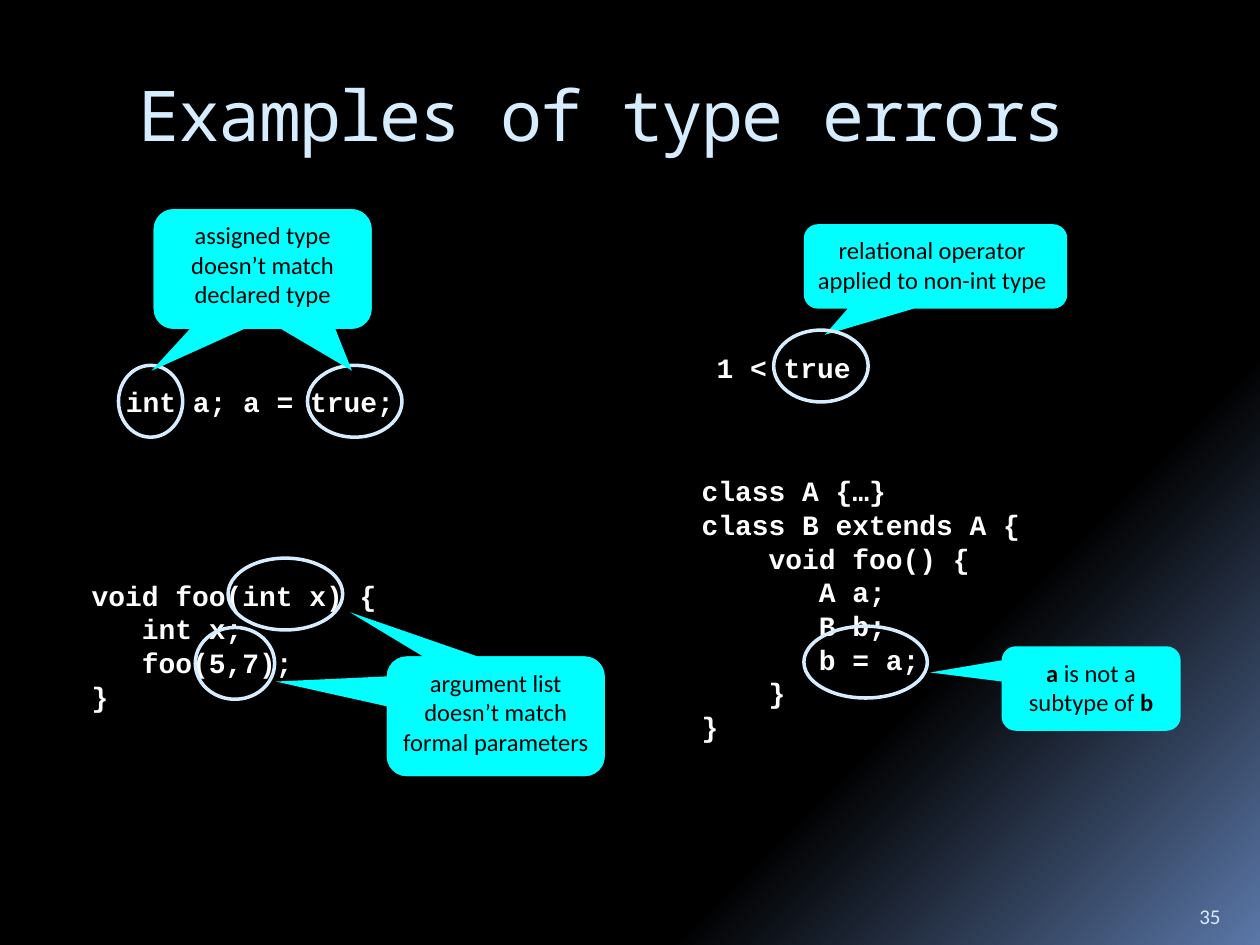
from pptx import Presentation
from pptx.dml.color import RGBColor
from pptx.enum.shapes import MSO_SHAPE
from pptx.enum.text import MSO_ANCHOR, PP_ALIGN
from pptx.util import Pt

PX = 9144  # 100 px to the inch
WHITE, BLACK, CYAN, PALE, BLUE = "FFFFFF", "000000", "00FFFF", "D6ECFF", "5B77A8"


def rgb(value):
    return RGBColor.from_string(value)


def place(box, origin=(0, 0)):
    """Turn a px box, relative to an origin, into EMU."""
    x, y, w, h = box
    return [n * PX for n in (origin[0] + x, origin[1] + y, w, h)]


def style(r, font, size, color, bold=False):
    r.font.name, r.font.size, r.font.bold = font, Pt(size), bold
    r.font.color.rgb = rgb(color)


def add_text(shapes, box, text, font, size, color, bold=False, wrap=True):
    tf = shapes.add_textbox(*place(box)).text_frame
    tf.word_wrap = wrap
    tf.text = text
    for p in tf.paragraphs:
        for r in p.runs:
            style(r, font, size, color, bold)
    return tf


def add_code(shapes, box, code):
    tf = add_text(shapes, box, code, "Courier New", 16, WHITE, True, wrap=False)
    for p in tf.paragraphs:
        p.line_spacing = Pt(19.25)
    tf.paragraphs[0].space_before = Pt(2)


def add_ring(shapes, box, origin):
    sp = shapes.add_shape(MSO_SHAPE.OVAL, *place(box, origin))
    sp.shadow.inherit = False
    sp.fill.background()
    sp.line.color.rgb = rgb(PALE)
    sp.line.width = Pt(2)


def add_note(shapes, box, origin, tips, runs, pads):
    """Callout with one bubble for each tip and its text in front."""
    for tip in tips:
        sp = shapes.add_shape(MSO_SHAPE.ROUNDED_RECTANGULAR_CALLOUT, *place(box, origin))
        sp.shadow.inherit = False
        sp.fill.solid()
        sp.fill.fore_color.rgb = rgb(CYAN)
        sp.line.fill.background()
        sp.adjustments[0], sp.adjustments[1] = tip
    x, y, w, h = box
    left, right = pads
    text_box = (x - left, y + 4, w + left + right, h - 10)
    tf = shapes.add_textbox(*place(text_box, origin)).text_frame
    tf.word_wrap = True
    p = tf.paragraphs[0]
    p.alignment = PP_ALIGN.CENTER
    for text, bold in runs:
        r = p.add_run()
        r.text = text
        style(r, "Calibri", 14, BLACK, bold)


def add_example(slide, box, code, rings, note, tips, runs, pads=(4, 4), rings_in_front=False):
    """Code in its box; rings and note are placed relative to the box."""
    add_code(slide.shapes, box, code)
    shapes = slide.shapes.add_group_shape().shapes
    origin = box[:2]
    if rings_in_front:
        add_note(shapes, note, origin, tips, runs, pads)
    for ring in rings:
        add_ring(shapes, ring, origin)
    if not rings_in_front:
        add_note(shapes, note, origin, tips, runs, pads)


def add_background(slide):
    fill = slide.background.fill
    fill.gradient()
    fill.gradient_angle = 315
    for stop, (position, color) in zip(fill.gradient_stops, [(0.73, BLACK), (1, BLUE)]):
        stop.position = position
        stop.color.rgb = rgb(color)


def add_title(slide, box, text):
    tf = add_text(slide.shapes, box, text, "Noto Sans Mono", 40, PALE)
    tf.margin_top = PX
    for r in tf.paragraphs[0].runs:
        r.font._element.set("spc", "-100")


def add_page_number(slide, box, number):
    tf = add_text(slide.shapes, box, number, "Calibri", 12, PALE)
    tf.vertical_anchor = MSO_ANCHOR.BOTTOM


def main():
    prs = Presentation()
    prs.slide_width, prs.slide_height = 1000 * PX, 750 * PX
    slide = prs.slides.add_slide(prs.slide_layouts[6])
    add_background(slide)
    add_page_number(slide, (942, 702, 50, 40), "35")
    add_title(slide, (100, 56, 850, 100), "Examples of type errors")

    add_example(
        slide, (90, 300, 272, 37), "int a; a = true;",
        rings=[(4, -10, 51, 57), (154, -10, 75, 57)],
        note=(32, -134, 173, 95), tips=[(-0.51, 0.85), (0.41, 0.85)],
        runs=[("assigned type doesn’t match declared type", False)])
    add_example(
        slide, (63, 454, 327, 117), "void foo(int x) {\n   int x;\n   foo(5,7);\n}",
        rings=[(92, 44, 63, 57), (118, -11, 91, 57)],
        note=(244, 67, 173, 95), tips=[(-1.01, -0.29), (-0.67, -0.87)],
        runs=[("argument list doesn’t match formal parameters", False)])
    add_example(
        slide, (559, 273, 130, 37), "1 < true",
        rings=[(55, -11, 75, 57)],
        note=(79, -95, 209, 67), tips=[(-0.42, 0.81)],
        runs=[("relational operator applied to non-int type", False)],
        pads=(12, 7), rings_in_front=True)
    add_example(
        slide, (547, 371, 358, 224),
        "class A {…}\nclass B extends A {\n    void foo() {\n       A a;\n"
        "       B b;\n       b = a;\n    }\n}",
        rings=[(91, 126, 98, 57)],
        note=(248, 142, 142, 67), tips=[(-0.9, -0.19)],
        runs=[("a", True), (" is not a subtype of ", False), ("b", True)])
    prs.save("out.pptx")


if __name__ == "__main__":
    main()
